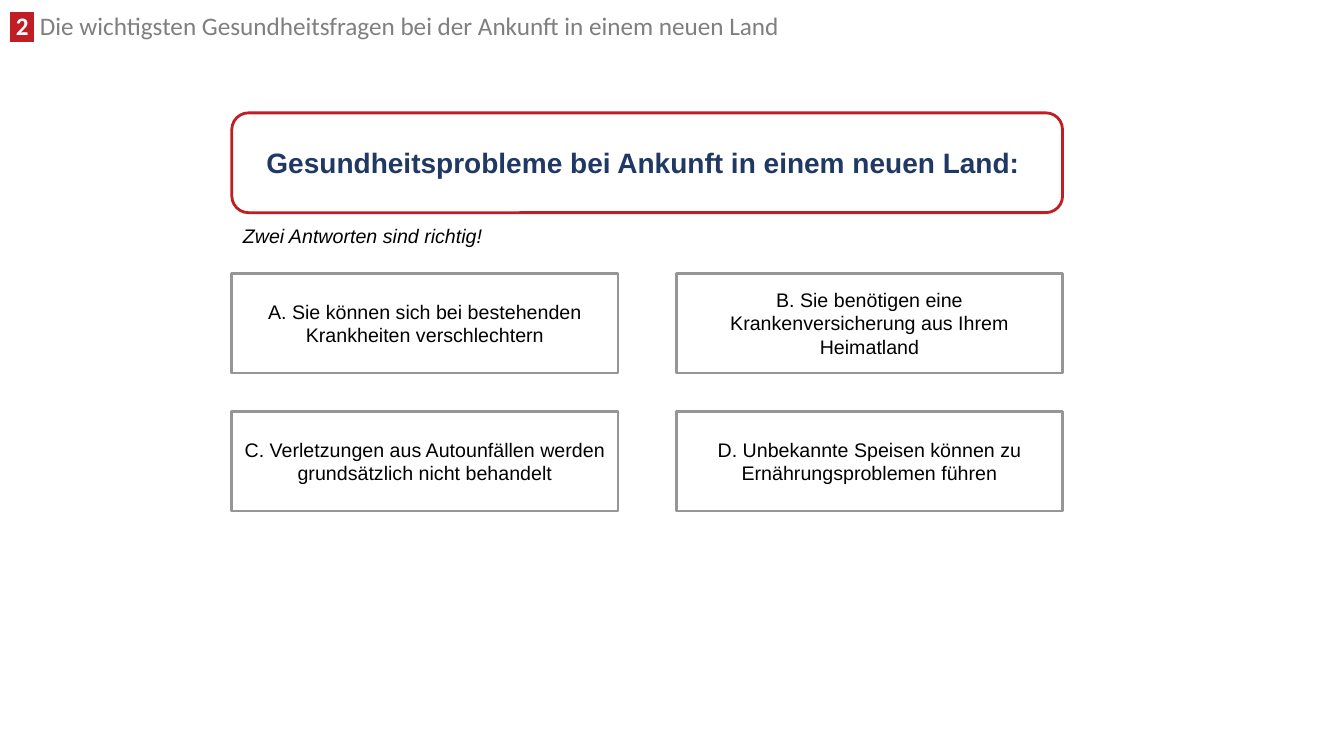
from dataclasses import dataclass
from itertools import product

from lxml import etree
from pptx import Presentation, util as u
from pptx.dml.color import RGBColor
from pptx.enum import shapes, text
from pptx.oxml.ns import qn


@dataclass(frozen=True)
class Theme:
    red: str = "C01E24"
    navy: str = "203864"
    gray: str = "7F7F7F"
    edge: str = "969696"
    black: str = "000000"
    white: str = "FFFFFF"
    head: int = 18
    ask: int = 20
    body: int = 14
    line: int = 2


@dataclass(frozen=True)
class Area:
    """Place in percent of the slide's width and height."""
    x: float
    y: float
    w: float
    h: float


@dataclass(frozen=True)
class Card:
    words: str
    area: Area
    form: shapes.MSO_SHAPE
    edge: str
    font: dict


T = Theme()

# Grid of answers, in percent of the slide
LEFT, TOP = 17.25, 36.13
WIDE, HIGH = 28.73, 13.2
STEP_X, STEP_Y = 33.08, 18.27

ANSWERS = (
    "A. Sie können sich bei bestehenden Krankheiten verschlechtern",
    "B. Sie benötigen eine Krankenversicherung aus Ihrem Heimatland",
    "C. Verletzungen aus Autounfällen werden grundsätzlich nicht behandelt",
    "D. Unbekannte Speisen können zu Ernährungsproblemen führen",
)

deck = Presentation()
deck.slide_width, deck.slide_height = u.Inches(13.33), u.Inches(7.5)
slide = deck.slides.add_slide(deck.slide_layouts[5])


def spot(area: Area) -> tuple[int, int, int, int]:
    wide, high = deck.slide_width / 100, deck.slide_height / 100
    return (round(area.x * wide), round(area.y * high),
            round(area.w * wide), round(area.h * high))


def write(para, words: str, size: int, color: str, **font):
    run = para.add_run()
    run.text = words
    look = {"size": u.Pt(size), "name": "Arial", "bold": False, **font}
    for key, value in look.items():
        setattr(run.font, key, value)
    run.font.color.rgb = RGBColor.from_string(color)
    return run


def mark(run, color: str) -> None:
    """Highlight a run; the element follows the text fill."""
    light = etree.Element(qn("a:highlight"))
    etree.SubElement(light, qn("a:srgbClr"), val=color)
    run.font._element.find(qn("a:solidFill")).addnext(light)


def draw(card: Card) -> None:
    shape = slide.shapes.add_shape(card.form, *spot(card.area))
    shape.shadow.inherit = False
    shape.fill.solid()
    shape.fill.fore_color.rgb = RGBColor.from_string(T.white)
    shape.line.color.rgb = RGBColor.from_string(card.edge)
    shape.line.width = u.Pt(T.line)
    frame = shape.text_frame
    frame.word_wrap = True
    frame.vertical_anchor = text.MSO_ANCHOR.MIDDLE
    para = frame.paragraphs[0]
    para.alignment = text.PP_ALIGN.CENTER
    write(para, card.words, **card.font)


# Chapter line in the title placeholder
title = slide.shapes.title
title.left, title.top, title.width, title.height = spot(
    Area(0, 1.47, 64.29, 4.53))
frame = title.text_frame
FORMAT = {"word_wrap": True, "auto_size": text.MSO_AUTO_SIZE.SHAPE_TO_FIT_TEXT,
          "vertical_anchor": text.MSO_ANCHOR.TOP}
for key, value in FORMAT.items():
    setattr(frame, key, value)
para = frame.paragraphs[0]
para.alignment, para.line_spacing = text.PP_ALIGN.LEFT, 0.8
mark(write(para, " 2 ", T.head, T.white, name="Calibri", bold=True), T.red)
write(para, " Die wichtigsten Gesundheitsfragen bei der Ankunft in einem neuen Land",
      T.head, T.gray, name="Calibri")

# Question
draw(Card("Gesundheitsprobleme bei Ankunft in einem neuen Land: ",
          Area(LEFT, 14.93, STEP_X + WIDE, HIGH),
          shapes.MSO_SHAPE.ROUNDED_RECTANGLE, T.red,
          {"size": T.ask, "color": T.navy, "bold": True}))

# Answers, two by two
for words, (row, col) in zip(ANSWERS, product(range(2), repeat=2)):
    area = Area(LEFT + col * STEP_X, TOP + row * STEP_Y, WIDE, HIGH)
    draw(Card(words, area, shapes.MSO_SHAPE.RECTANGLE, T.edge,
              {"size": T.body, "color": T.black}))

# Hint
hint = slide.shapes.add_textbox(*spot(Area(17.33, 28.93, 19.88, 4.53)))
hint.text_frame.word_wrap = False
hint.text_frame.auto_size = text.MSO_AUTO_SIZE.SHAPE_TO_FIT_TEXT
write(hint.text_frame.paragraphs[0], "Zwei Antworten sind richtig!",
      T.body, T.black, italic=True)

deck.save("out.pptx")
